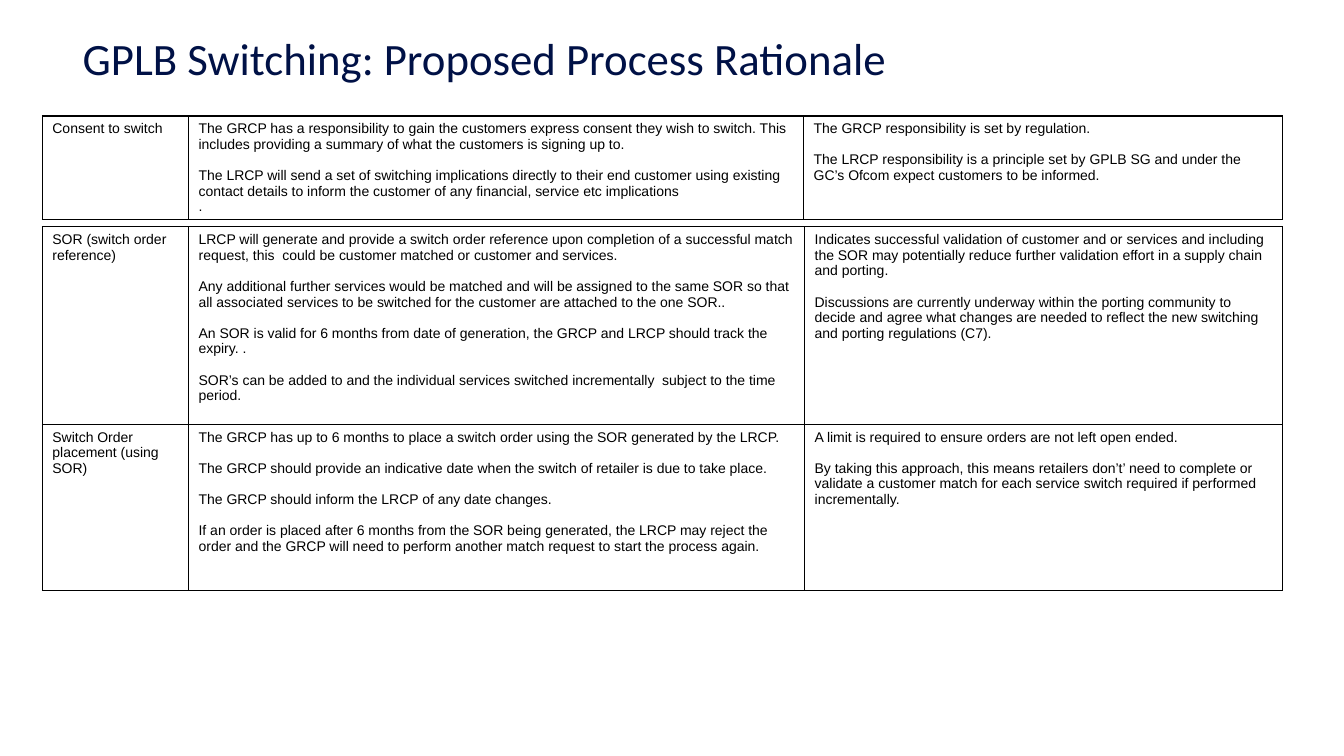
from dataclasses import dataclass

import pptx
import pptx.dml.color
import pptx.enum.text
import pptx.oxml
import pptx.oxml.ns
import pptx.presentation
import pptx.slide
import pptx.table
import pptx.util

Inches = pptx.util.Inches
Pt = pptx.util.Pt
RGB = pptx.dml.color.RGBColor.from_string


@dataclass(frozen=True)
class Theme:
    title_font: str = "Calibri"
    body_font: str = "Arial"
    title_size: float = 32
    body_size: float = 10
    block_gap: float = 11.2
    border_width: float = 1
    title_color: str = "001146"
    ink: str = "000000"
    paper: str = "FFFFFF"


@dataclass(frozen=True)
class Step:
    """One process step; each block of text is set apart by a gap."""
    name: str
    process: tuple[str, ...]
    rationale: tuple[str, ...]
    height: float


@dataclass(frozen=True)
class StepTable:
    top: float
    column_widths: tuple[float, ...]
    steps: tuple[Step, ...]


THEME = Theme()
TABLE_LEFT = 0.42

# Content
CONSENT = Step(
    "Consent to switch",
    (
        "The GRCP has a responsibility to gain the customers express consent they wish to switch. "
        "This includes providing a summary of what the customers is signing up to.",
        "The LRCP will send a set of switching implications directly to their end customer using "
        "existing contact details to inform the customer of any financial, service etc implications\n.",
    ),
    (
        "The GRCP responsibility is set by regulation.",
        "The LRCP responsibility is a principle set by GPLB SG and under the GC’s Ofcom expect "
        "customers to be informed.",
    ),
    1.03,
)
ORDER_REFERENCE = Step(
    "SOR (switch order reference)",
    (
        "LRCP will generate and provide a switch order reference upon completion of a successful "
        "match request, this  could be customer matched or customer and services.",
        "Any additional further services would be matched and will be assigned to the same SOR so "
        "that all associated services to be switched for the customer are attached to the one SOR..",
        "An SOR is valid for 6 months from date of generation, the GRCP and LRCP should track the "
        "expiry. .",
        "SOR’s can be added to and the individual services switched incrementally  subject to the "
        "time period.",
    ),
    (
        "Indicates successful validation of customer and or services and including the SOR may "
        "potentially reduce further validation effort in a supply chain and porting.",
        "Discussions are currently underway within the porting community to decide and agree what "
        "changes are needed to reflect the new switching and porting regulations (C7).",
    ),
    1.96,
)
ORDER_PLACEMENT = Step(
    "Switch Order placement (using SOR)",
    (
        "The GRCP has up to 6 months to place a switch order using the SOR generated by the LRCP.",
        "The GRCP should provide an indicative date when the switch of retailer is due to take place.",
        "The GRCP should inform the LRCP of any date changes.",
        "If an order is placed after 6 months from the SOR being generated, the LRCP may reject the "
        "order and the GRCP will need to perform another match request to start the process again.",
    ),
    (
        "A limit is required to ensure orders are not left open ended.",
        "By taking this approach, this means retailers don’t’ need to complete or validate a "
        "customer match for each service switch required if performed incrementally.",
    ),
    1.65,
)
STEP_TABLES = (
    StepTable(1.15, (1.45, 6.1, 4.75), (CONSENT,)),
    StepTable(2.25, (1.45, 6.11, 4.74), (ORDER_REFERENCE, ORDER_PLACEMENT)),
)


def style_run(run, font: str, size: float, color: str) -> None:
    run.font.name = font
    run.font.size = Pt(size)
    run.font.color.rgb = RGB(color)


def add_title(slide: pptx.slide.Slide, text: str) -> None:
    title = slide.shapes.title
    title.left, title.top = Inches(0.72), Inches(0.31)
    title.width, title.height = Inches(9.81), Inches(0.58)
    frame = title.text_frame
    frame.text = text
    frame.word_wrap = True
    frame.auto_size = pptx.enum.text.MSO_AUTO_SIZE.NONE
    frame.vertical_anchor = pptx.enum.text.MSO_ANCHOR.BOTTOM
    heading = frame.paragraphs[0]
    heading.alignment = pptx.enum.text.PP_ALIGN.LEFT
    heading.line_spacing = 0.8
    style_run(heading.runs[0], THEME.title_font, THEME.title_size, THEME.title_color)


def add_borders(cell: pptx.table._Cell) -> None:
    properties = cell._tc.get_or_add_tcPr()
    for side in ("lnL", "lnR", "lnT", "lnB"):
        properties.append(pptx.oxml.parse_xml(
            f'<a:{side} {pptx.oxml.ns.nsdecls("a")} w="{Pt(THEME.border_width)}">'
            f'<a:solidFill><a:srgbClr val="{THEME.ink}"/></a:solidFill></a:{side}>'
        ))


def fill_cell(cell: pptx.table._Cell, blocks: tuple[str, ...]) -> None:
    add_borders(cell)
    cell.fill.solid()
    cell.fill.fore_color.rgb = RGB(THEME.paper)
    cell.text_frame.text = "\n".join(blocks)
    # Only the first line of each later block gets the gap above it
    gaps = [
        THEME.block_gap if block_index and not line_index else 0
        for block_index, block in enumerate(blocks)
        for line_index, _ in enumerate(block.splitlines())
    ]
    for paragraph, gap in zip(cell.text_frame.paragraphs, gaps):
        paragraph.space_before = Pt(gap)
        style_run(paragraph.runs[0], THEME.body_font, THEME.body_size, THEME.ink)


def add_step_table(slide: pptx.slide.Slide, layout: StepTable) -> None:
    table = slide.shapes.add_table(
        len(layout.steps), len(layout.column_widths),
        Inches(TABLE_LEFT), Inches(layout.top),
        Inches(sum(layout.column_widths)), Inches(sum(step.height for step in layout.steps)),
    ).table
    table.first_row = table.horz_banding = False
    for column, width in zip(table.columns, layout.column_widths):
        column.width = Inches(width)
    for row, step in zip(table.rows, layout.steps):
        row.height = Inches(step.height)
        for cell, blocks in zip(row.cells, ((step.name,), step.process, step.rationale)):
            fill_cell(cell, blocks)


def main() -> None:
    presentation = pptx.Presentation()
    presentation.slide_width, presentation.slide_height = Inches(13.33), Inches(7.5)
    slide = presentation.slides.add_slide(presentation.slide_layouts.get_by_name("Title Only"))

    # Heading, then the process tables
    add_title(slide, "GPLB Switching: Proposed Process Rationale")
    for step_table in STEP_TABLES:
        add_step_table(slide, step_table)

    presentation.save("out.pptx")


if __name__ == "__main__":
    main()
